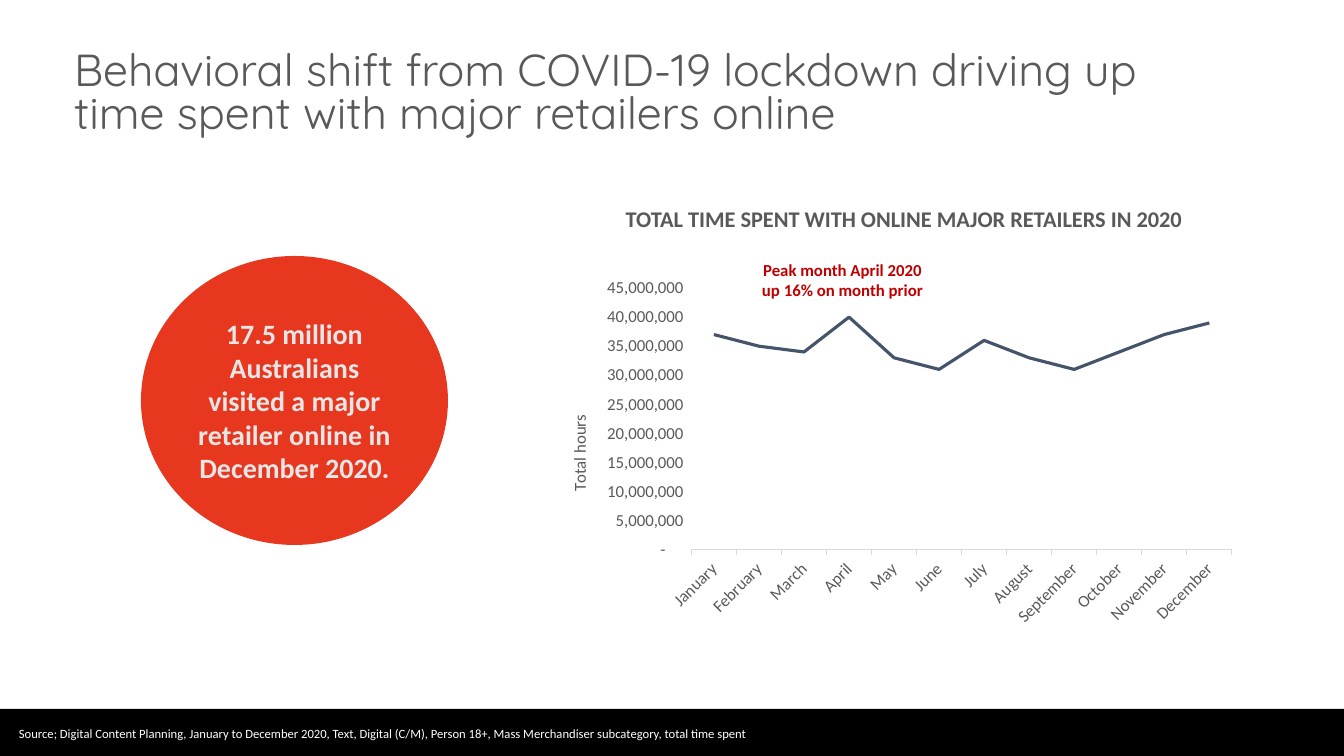
import pptx
import pptx.util
import pptx.chart.data
import pptx.dml.color
import pptx.enum.chart
import pptx.enum.shapes
import pptx.enum.text
import pptx.oxml

RGB = pptx.dml.color.RGBColor
GREY = RGB(0x59, 0x59, 0x59)
PALE = RGB(0xE7, 0xE6, 0xE6)
RED = RGB(0xE8, 0x37, 0x1F)
DARK = RGB(0xC0, 0x00, 0x00)
NAVY = RGB(0x44, 0x54, 0x6A)
RULE = RGB(0xD9, 0xD9, 0xD9)
BLACK = RGB(0, 0, 0)
WHITE = RGB(255, 255, 255)
Pt = pptx.util.Pt
ALIGN = pptx.enum.text.PP_ALIGN
ANCHOR = pptx.enum.text.MSO_ANCHOR
SHAPE = pptx.enum.shapes.MSO_SHAPE
TICK = pptx.enum.chart.XL_TICK_MARK
PX = 914400 / 100.8


def place(*box):
    return [round(n * PX) for n in box]


def write(shape, text, size, color, bold=False, align=ALIGN.CENTER, face="Calibri"):
    frame = shape.text_frame
    frame.word_wrap = True
    para = frame.paragraphs[0]
    para.alignment = align
    run = para.add_run()
    run.text = text
    run.font.name = face
    run.font.size = Pt(size)
    run.font.bold = bold
    run.font.color.rgb = color
    return frame


deck = pptx.Presentation()
deck.slide_width, deck.slide_height = place(1344, 756)
slide = deck.slides.add_slide(deck.slide_layouts[5])
shapes = slide.shapes

title = shapes.title
title.left, title.top, title.width, title.height = place(64, 25, 1152, 140)
frame = write(title, "Behavioral shift from COVID-19 lockdown driving up time spent with major retailers online",
              32, GREY, align=ALIGN.LEFT, face="Quicksand")
frame.auto_size = pptx.enum.text.MSO_AUTO_SIZE.NONE
frame.vertical_anchor = ANCHOR.MIDDLE
frame.paragraphs[0].line_spacing = 0.8
frame.paragraphs[0].space_before = Pt(0)

band = shapes.add_shape(SHAPE.RECTANGLE, *place(0, 709, 1344, 47))
disc = shapes.add_shape(SHAPE.OVAL, *place(141, 256, 307, 289))
for shape, color in ((band, BLACK), (disc, RED)):
    shape.shadow.inherit = False
    shape.fill.solid()
    shape.fill.fore_color.rgb = color
    shape.line.fill.background()
frame = write(disc, "17.5 million Australians visited a major retailer online in December 2020.", 20, PALE, True)
frame.vertical_anchor = ANCHOR.MIDDLE

data = pptx.chart.data.CategoryChartData(number_format="#,##0")
data.categories = ["January", "February", "March", "April", "May", "June", "July",
                   "August", "September", "October", "November", "December"]
hours = [37, 35, 34, 40, 33, 31, 36, 33, 31, 34, 37, 39]
data.add_series("Series 1", [n * 1000000 for n in hours])
chart = shapes.add_chart(pptx.enum.chart.XL_CHART_TYPE.LINE, *place(544, 270, 702, 363), data).chart
chart.has_title = False
chart.has_legend = False
chart.font.name = "Calibri"
chart.font.size = Pt(10)

line = chart.plots[0].series[0]
line.smooth = False
line.format.line.color.rgb = NAVY
line.format.line.width = Pt(2.25)
line.marker.style = pptx.enum.chart.XL_MARKER_STYLE.NONE

months, scale = chart.category_axis, chart.value_axis
for axis in (months, scale):
    axis.has_major_gridlines = False
    axis.minor_tick_mark = TICK.NONE
    font = axis.tick_labels.font
    font.name = "Calibri"
    font.size = Pt(12)
    font.color.rgb = GREY
months.major_tick_mark = TICK.OUTSIDE
months.format.line.color.rgb = RULE
months.format.line.width = Pt(0.75)
months._element.txPr.bodyPr.set("rot", "-2700000")
scale.major_tick_mark = TICK.NONE
scale.format.line.fill.background()
scale.minimum_scale = 0
scale.maximum_scale = 45000000
scale.major_unit = 5000000
scale.tick_labels.number_format = '_-* #,##0_-;\\-* #,##0_-;_-* "-"??_-;_-@_-'
scale.tick_labels.number_format_is_linked = False

label = scale.axis_title
run = label.text_frame.paragraphs[0].add_run()
run.text = "Total hours"
run.font.name = "Calibri"
run.font.size = Pt(12)
run.font.bold = False
run.font.color.rgb = GREY
body = label.text_frame._txBody.bodyPr
body.set("rot", "-5400000")
body.set("vert", "horz")

plot = chart._chartSpace.chart.plotArea
for host, spots in (
    (plot, (("layoutTarget", "inner"), ("xMode", "edge"), ("yMode", "edge"),
            ("x", 0.21), ("y", 0.05), ("w", 0.77), ("h", 0.72))),
    (label._element, (("xMode", "edge"), ("yMode", "edge"), ("x", 0.03), ("y", 0.39))),
):
    for old in host.xpath("c:layout"):
        host.remove(old)
    inner = "".join(f'<c:{tag} val="{val}"/>' for tag, val in spots)
    layout = pptx.oxml.parse_xml(
        '<c:layout xmlns:c="http://schemas.openxmlformats.org/drawingml/2006/chart">'
        f"<c:manualLayout>{inner}</c:manualLayout></c:layout>")
    host.insert(0 if host is plot else 1, layout)

notes = (
    ((553, 200, 702, 37), "TOTAL TIME SPENT WITH ONLINE MAJOR RETAILERS IN 2020", 16, GREY, True, ALIGN.CENTER),
    ((746, 255, 193, 50), "Peak month April 2020 up 16% on month prior", 12, DARK, True, ALIGN.CENTER),
    ((9, 721, 1095, 25), "Source; Digital Content Planning, January to December 2020, Text, Digital (C/M), "
     "Person 18+, Mass Merchandiser subcategory, total time spent", 9, WHITE, False, ALIGN.LEFT),
)
for box, *style in notes:
    write(shapes.add_textbox(*place(*box)), *style)

deck.save("out.pptx")
